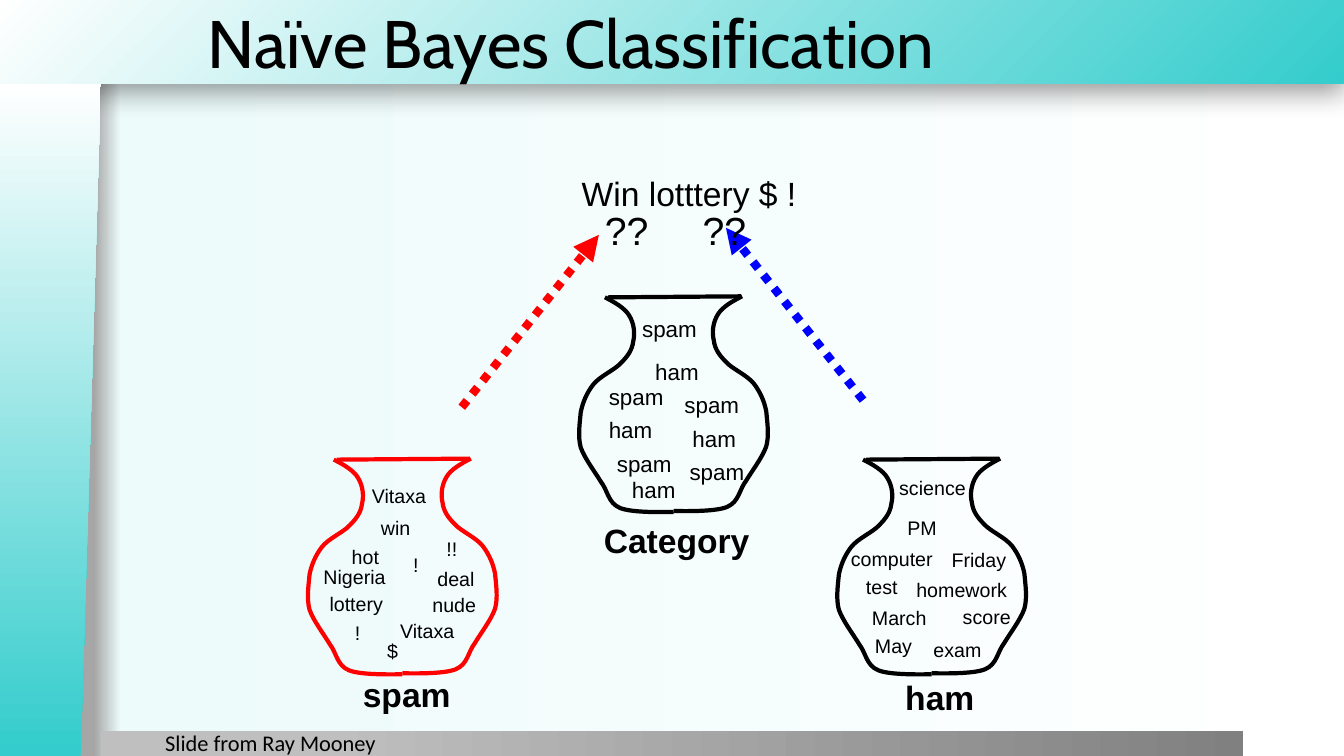
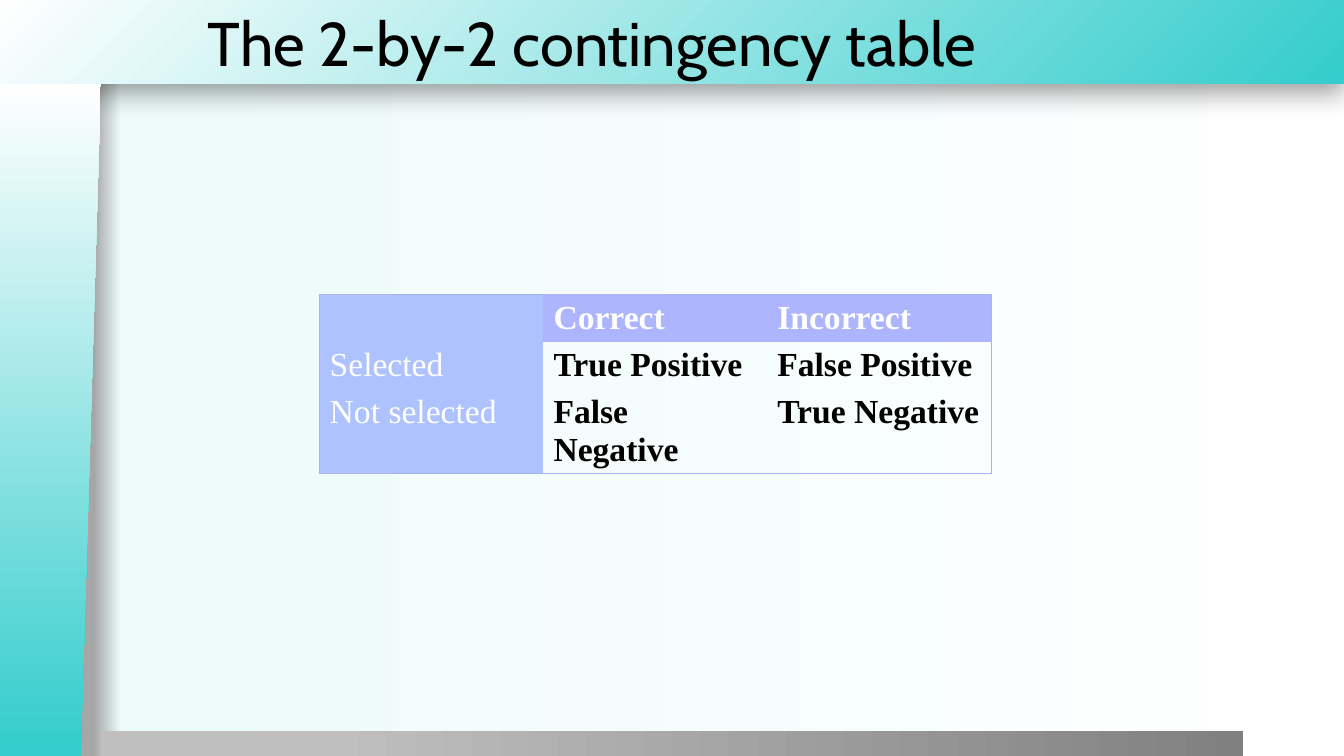
"""Build two slides on naïve Bayes classification and the contingency table."""
from pptx import Presentation
from pptx.dml.color import RGBColor
from pptx.enum.dml import MSO_LINE
from pptx.enum.shapes import MSO_CONNECTOR, MSO_SHAPE
from pptx.enum.text import MSO_ANCHOR, MSO_AUTO_SIZE, PP_ALIGN
from pptx.oxml import parse_xml
from pptx.oxml.ns import nsdecls, qn
from pptx.util import Inches, Pt

COLORS = {
    "teal": "34CCCC", "white": "FFFFFF", "black": "000000",
    "mist": "EDFBFB", "edge": "A6A6A6", "silver": "BFBFBF", "gray": "808080",
    "red": "FF0000", "blue": "0000FF",
    "stub": "ADC2FF", "header": "AEB5FF", "border": "A7B2FB",
}
LINEAR = '<a:lin ang="0" scaled="0"/>'
CORNER = '<a:path path="circle"><a:fillToRect l="100000" t="100000"/></a:path>'

VASE_WIDTH = 1.9
VASE_PROFILE = [
    (0.27, 0),
    (0.37, 0.05), (0.47, 0.11), (0.51, 0.18),
    (0.56, 0.26), (0.57, 0.36), (0.55, 0.44),
    (0.54, 0.52), (0.5, 0.58), (0.43, 0.65),
    (0.37, 0.72), (0.22, 0.78), (0.15, 0.87),
    (0.09, 0.95), (0.05, 1.04), (0.03, 1.14),
    (0.02, 1.25), (0, 1.38), (0.03, 1.49),
    (0.07, 1.6), (0.17, 1.73), (0.23, 1.83),
    (0.3, 1.92), (0.3, 2.04), (0.42, 2.09),
    (0.54, 2.14), (0.87, 2.13), (0.95, 2.13),
]
VASES = [(8.29, 4.56, "black"), (3.04, 4.56, "red"), (5.73, 2.95, "black")]

SPAM_WORDS = [
    ("Vitaxa", 3.59, 4.75, 0.76), ("win", 3.68, 5.07, 0.49),
    ("hot", 3.39, 5.36, 0.47), ("!!", 4.33, 5.28, 0.31),
    ("!", 4, 5.44, 0.25), ("Nigeria", 3.11, 5.55, 0.82),
    ("deal", 4.24, 5.57, 0.57), ("lottery", 3.17, 5.82, 0.73),
    ("nude", 4.19, 5.83, 0.65), ("!", 3.42, 6.11, 0.25),
    ("Vitaxa", 3.87, 6.09, 0.76), ("$", 3.74, 6.29, 0.31),
]
HAM_WORDS = [
    ("science", 8.82, 4.67, 0.86), ("PM", 8.9, 5.07, 0.49),
    ("computer", 8.34, 5.38, 1.01), ("Friday", 9.34, 5.39, 0.74),
    ("test", 8.49, 5.65, 0.53), ("homework", 8.99, 5.68, 1.1),
    ("March", 8.55, 5.96, 0.74), ("score", 9.45, 5.95, 0.68),
    ("May", 8.58, 6.24, 0.57), ("exam", 9.16, 6.28, 0.68),
]
CATEGORY_WORDS = [
    ("spam", 6.27, 3.08, 0.75), ("ham", 6.4, 3.5, 0.64),
    ("spam", 5.94, 3.75, 0.75), ("spam", 6.69, 3.83, 0.75),
    ("ham", 5.94, 4.08, 0.64), ("ham", 6.77, 4.17, 0.64),
    ("spam", 6.02, 4.42, 0.75), ("spam", 6.74, 4.5, 0.75),
    ("ham", 6.17, 4.67, 0.64),
]
VASE_LABELS = [
    ("spam", 3.5, 6.64, 1.08), ("ham", 8.88, 6.67, 0.89),
    ("Category", 5.89, 5.11, 1.66),
]
CONTINGENCY = [
    ["", "Correct", "Incorrect"],
    ["Selected", "True Positive", "False Positive"],
    ["Not selected", "False Negative", "True Negative"],
]


def rgb(name):
    return RGBColor.from_string(COLORS[name])


class Lecture:
    def __init__(self):
        self.deck = Presentation()
        self.deck.slide_width, self.deck.slide_height = Inches(13.33), Inches(7.5)
        self.layout = self.deck.slide_layouts[5]
        self.page = None
        self.style_layout()

    def paint_gradient(self, owner, fill, stops, direction=LINEAR):
        fill.gradient()
        marks = "".join(
            f'<a:gs pos="{position * 1000}"><a:srgbClr val="{COLORS[name]}"/></a:gs>'
            for position, name in stops)
        old = owner.element.find(".//" + qn("a:gradFill"))
        old.getparent().replace(old, parse_xml(
            f'<a:gradFill {nsdecls("a")} rotWithShape="1"><a:gsLst>{marks}</a:gsLst>'
            f'{direction}</a:gradFill>'))

    def style_layout(self):
        self.paint_gradient(self.layout, self.layout.background.fill,
                            [(7, "edge"), (9, "mist"), (100, "white")])
        title = self.layout.placeholders[0]
        title.left, title.top = Inches(1.96), Inches(0)
        title.width, title.height = Inches(11.38), Inches(0.83)

    def decorate_layout(self):
        header = self.band(-0.01, 0, 13.34, 0.83, [(0, "teal"), (100, "white")], CORNER)
        header.element.spPr.find(qn("a:effectLst")).append(parse_xml(
            f'<a:outerShdw {nsdecls("a")} blurRad="{Pt(20)}" dist="{Pt(6)}" '
            'dir="5400000" algn="t" rotWithShape="0"><a:srgbClr val="000000">'
            '<a:alpha val="40000"/></a:srgbClr></a:outerShdw>'))
        footer = self.band(1, 7.25, 11.33, 0.26, [(20, "silver"), (100, "gray")])
        side = self.band(-2.84, 3.67, 6.68, 1, [(1, "teal"), (100, "white")],
                         kind=MSO_SHAPE.FLOWCHART_MANUAL_INPUT)
        side.rotation = 270
        side.element.spPr.find(qn("a:xfrm")).set("flipV", "1")
        title = self.layout.placeholders[0].element
        for number, shape in enumerate((header, footer, side), 20):
            shape.element.nvSpPr.cNvPr.set("id", str(number))
            title.addprevious(shape.element)

    def band(self, left, top, width, height, stops, direction=LINEAR,
             kind=MSO_SHAPE.RECTANGLE):
        shape = self.page.shapes.add_shape(
            kind, Inches(left), Inches(top), Inches(width), Inches(height))
        self.paint_gradient(shape, shape.fill, stops, direction)
        shape.line.fill.background()
        shape.shadow.inherit = False
        return shape

    def add_page(self, title, size):
        first = self.page is None
        self.page = self.deck.slides.add_slide(self.layout)
        if first:
            self.decorate_layout()
        frame = self.page.shapes.title.text_frame
        frame.text = title
        frame.vertical_anchor = MSO_ANCHOR.MIDDLE
        frame.auto_size = MSO_AUTO_SIZE.NONE
        para = frame.paragraphs[0]
        para.alignment = PP_ALIGN.LEFT
        self.style_font(para, size, "Cabin")

    def style_font(self, para, size, name="Arial", color="black", bold=False):
        font = para.font
        font.size, font.name, font.bold = Pt(size), name, bold
        font.color.rgb = rgb(color)

    def text(self, text, left, top, width, size, name="Arial", bold=False):
        box = self.page.shapes.add_textbox(
            Inches(left), Inches(top), Inches(width), Inches(size / 60 + 0.1))
        frame = box.text_frame
        frame.word_wrap = False
        frame.auto_size = MSO_AUTO_SIZE.SHAPE_TO_FIT_TEXT
        frame.text = text
        self.style_font(frame.paragraphs[0], size, name, bold=bold)

    def words(self, entries, size, bold=False):
        for entry in entries:
            self.text(*entry, size, bold=bold)

    def line(self, start, end, color, width):
        connector = self.page.shapes.add_connector(
            MSO_CONNECTOR.STRAIGHT, *(Inches(value) for value in (*start, *end)))
        connector.line.color.rgb = rgb(color)
        connector.line.width = Pt(width)
        connector.element.spPr.append(parse_xml(f'<a:effectLst {nsdecls("a")}/>'))
        return connector

    def arrow(self, start, end, color):
        connector = self.line(start, end, color, 6)
        connector.line.dash_style = MSO_LINE.ROUND_DOT
        connector.element.spPr.find(qn("a:ln")).append(
            parse_xml(f'<a:tailEnd {nsdecls("a")} type="triangle"/>'))

    def curve(self, points, color):
        corners = [(Inches(x), Inches(y)) for x, y in points]
        builder = self.page.shapes.build_freeform(*corners[0])
        builder.add_line_segments(corners[1:], close=False)
        shape = builder.convert_to_shape()
        segments = list(shape.element.iter(qn("a:lnTo")))
        for index in range(0, len(segments), 3):
            bend = parse_xml(f'<a:cubicBezTo {nsdecls("a")}/>')
            segments[index].addprevious(bend)
            for segment in segments[index:index + 3]:
                bend.append(segment[0])
                segment.getparent().remove(segment)
        shape.fill.background()
        shape.line.color.rgb = rgb(color)
        shape.line.width = Pt(3)
        shape.shadow.inherit = False

    def vase(self, left, top, color):
        self.curve([(left + x, top + y) for x, y in VASE_PROFILE], color)
        self.curve([(left + VASE_WIDTH - x, top + y - 0.01) for x, y in VASE_PROFILE],
                   color)
        self.line((left + 0.3, top), (left + 1.62, top - 0.01), color, 3)

    def table(self, rows, left, top, column_width, row_heights):
        columns = len(rows[0])
        table = self.page.shapes.add_table(
            len(rows), columns, Inches(left), Inches(top),
            Inches(column_width * columns), Inches(sum(row_heights))).table
        table.first_row = table.horz_banding = False
        for column in table.columns:
            column.width = Inches(column_width)
        for r, (row, height) in enumerate(zip(rows, row_heights)):
            table.rows[r].height = Inches(height)
            for c, text in enumerate(row):
                self.fill_cell(table.cell(r, c), text, r == 0, c == 0)
                self.border_cell(table.cell(r, c), {
                    "L": c == 0, "R": c == columns - 1,
                    "T": r == 0, "B": r == len(rows) - 1})

    def fill_cell(self, cell, text, is_header, is_stub):
        cell.text = text
        color = "white" if is_header or is_stub else "black"
        self.style_font(cell.text_frame.paragraphs[0], 24, "Times New Roman",
                        color, bold=not is_stub)
        if is_header or is_stub:
            cell.fill.solid()
            cell.fill.fore_color.rgb = rgb("stub" if is_stub else "header")
        else:
            cell.fill.background()

    def border_cell(self, cell, sides):
        properties = cell._tc.get_or_add_tcPr()
        solid = f'<a:solidFill><a:srgbClr val="{COLORS["border"]}"/></a:solidFill>'
        for index, (side, outer) in enumerate(sides.items()):
            properties.insert(index, parse_xml(
                f'<a:ln{side} {nsdecls("a")} w="{Pt(0.75)}">'
                f'{solid if outer else "<a:noFill/>"}</a:ln{side}>'))


def main():
    lecture = Lecture()

    lecture.add_page("Naïve Bayes Classification", 48)
    lecture.words(SPAM_WORDS + HAM_WORDS, 14)
    lecture.words(CATEGORY_WORDS, 16)
    lecture.words(VASE_LABELS, 24, bold=True)
    lecture.text("Win lotttery $ !", 5.67, 1.67, 2.35, 24)
    lecture.arrow((4.58, 4.04), (5.94, 2.33), "red")
    lecture.arrow((8.56, 3.97), (7.2, 2.26), "blue")
    lecture.words([("??", left, 2, 0.63) for left in (5.9, 6.87)], 28)
    lecture.text("Slide from Ray Mooney", 1.54, 7.18, 2.58, 16, "Calibri")
    for vase in VASES:
        lecture.vase(*vase)

    lecture.add_page("The 2-by-2 contingency table", 44)
    lecture.table(CONTINGENCY, 3.17, 2.92, 2.22, [0.47, 0.47, 0.83])

    lecture.deck.save("out.pptx")


if __name__ == "__main__":
    main()
